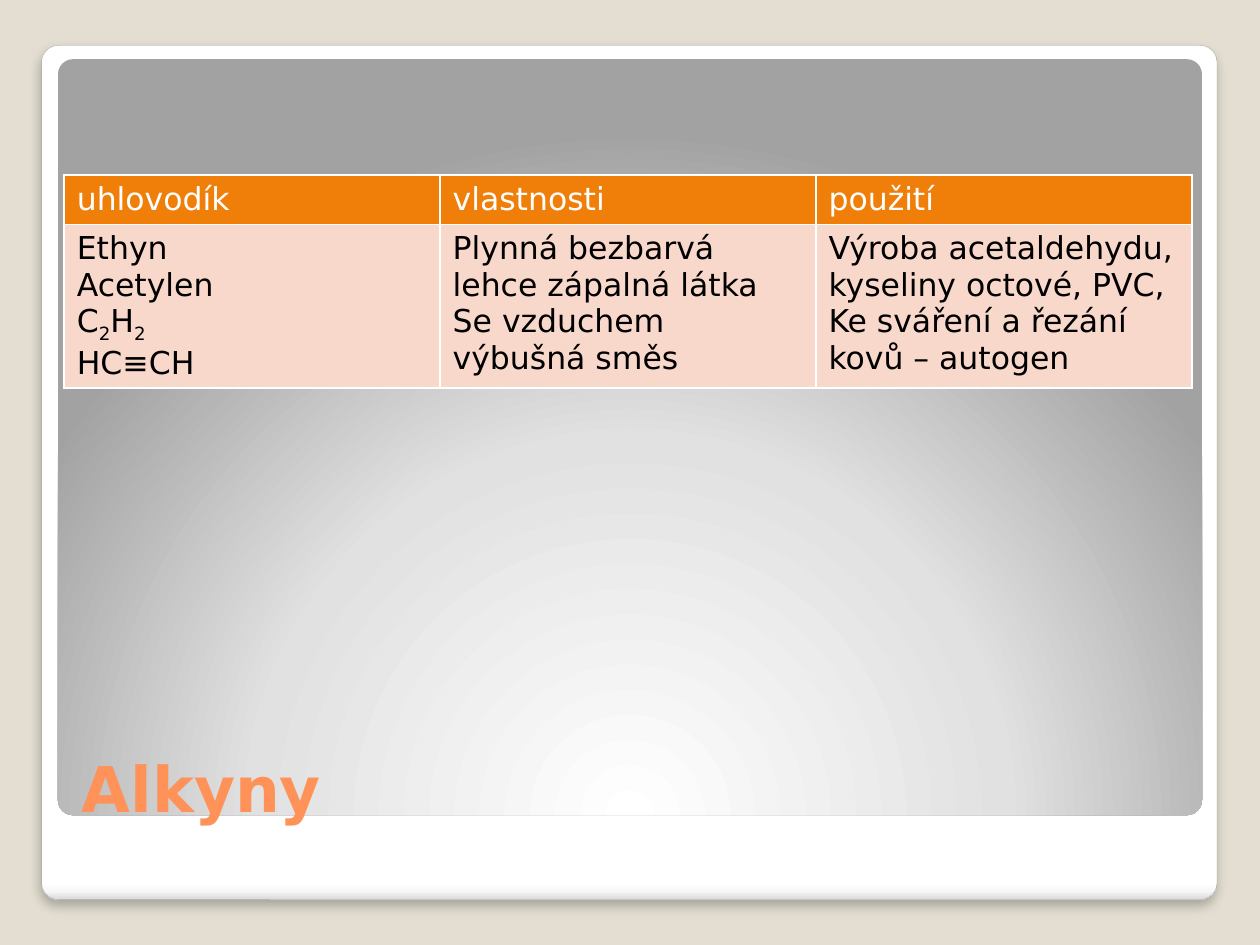
import dataclasses
import typing

import pptx
import pptx.dml.color
import pptx.enum.shapes
import pptx.enum.text
import pptx.oxml
import pptx.oxml.ns
import pptx.util

Inches = pptx.util.Inches
Pt = pptx.util.Pt
RGB = pptx.dml.color.RGBColor

BEIGE = RGB(0xE3, 0xDE, 0xD1)
WHITE = RGB(0xFF, 0xFF, 0xFF)
BLACK = RGB(0x00, 0x00, 0x00)
GREY = RGB(0xA4, 0xA4, 0xA4)
ORANGE = RGB(0xF0, 0x7F, 0x09)
PEACH = RGB(0xF9, 0xD8, 0xCC)
TITLE_ORANGE = RGB(0xFF, 0x92, 0x58)

FONT = "DejaVu Sans"
TITLE_FORMAT = {"name": FONT, "size": Pt(36), "bold": True}
CELL_FORMAT = {"name": FONT, "size": Pt(18), "bold": False}

NS = pptx.oxml.ns.nsdecls("a")


@dataclasses.dataclass(frozen=True)
class Panel:
    box: tuple[float, float, float, float]
    stops: tuple[tuple[int, str], ...]
    shade: str
    framed: bool


@dataclasses.dataclass(frozen=True)
class Run:
    text: str
    subscript: bool = False


Lines = list[list[Run]]

PANELS = [
    Panel((0.33, 0.36, 9.33, 6.78),
          ((0, "FFFFFF"), (98, "FFFFFF"), (99, "F7F7F7"), (100, "DADADA")),
          '<a:lin ang="5400000" scaled="0"/>', True),
    Panel((0.46, 0.47, 9.08, 6),
          ((0, "FFFFFF"), (55, "E1E1E1"), (100, "A2A2A2")),
          '<a:path path="circle"><a:fillToRect l="50000" t="175000" '
          'r="50000" b="-75000"/></a:path>', False),
]


def plain(*lines: str) -> Lines:
    return [[Run(line)] for line in lines]


ETHYNE = plain("Ethyn", "Acetylen")
ETHYNE += [[Run("C"), Run("2", True), Run("H"), Run("2", True)]]
ETHYNE += plain("HC≡CH")

ROWS: list[list[Lines]] = [
    [plain("uhlovodík"), plain("vlastnosti"), plain("použití")],
    [ETHYNE,
     plain("Plynná bezbarvá lehce zápalná látka", "Se vzduchem výbušná směs"),
     plain("Výroba acetaldehydu, kyseliny octové, PVC,",
           "Ke sváření a řezání kovů – autogen")],
]
ROW_STYLES = [(ORANGE, WHITE), (PEACH, BLACK)]
ROW_HEIGHTS = [0.39, 1.3]


def format_font(font: typing.Any, values: dict[str, typing.Any], color: RGB) -> None:
    for name, value in values.items():
        setattr(font, name, value)
    font.color.rgb = color


def add_panel(slide: typing.Any, panel: Panel) -> None:
    sp = slide.shapes.add_shape(
        pptx.enum.shapes.MSO_SHAPE.ROUNDED_RECTANGLE, *map(Inches, panel.box))
    sp.adjustments[0] = 0.02
    sp.shadow.inherit = False
    stops = "".join(f'<a:gs pos="{pos * 1000}"><a:srgbClr val="{color}"/></a:gs>'
                    for pos, color in panel.stops)
    sp._element.spPr.insert(2, pptx.oxml.parse_xml(
        f'<a:gradFill {NS} rotWithShape="1"><a:gsLst>{stops}</a:gsLst>'
        f'{panel.shade}</a:gradFill>'))
    if not panel.framed:
        sp.line.fill.background()
        return
    sp.line.color.rgb = GREY
    sp.line.width = Pt(0.16)
    effects = sp._element.spPr.find(pptx.oxml.ns.qn("a:effectLst"))
    effects.append(pptx.oxml.parse_xml(
        f'<a:outerShdw {NS} blurRad="{Pt(6)}" dist="{Pt(4)}" dir="5400000" '
        'algn="tl" rotWithShape="0"><a:srgbClr val="000000">'
        '<a:alpha val="25000"/></a:srgbClr></a:outerShdw>'))


def fill_cell(cell: typing.Any, lines: Lines, fill: RGB, color: RGB) -> None:
    # Borders come before the fill in the cell properties
    tc_pr = cell._tc.get_or_add_tcPr()
    for side in "LRTB":
        tc_pr.append(pptx.oxml.parse_xml(
            f'<a:ln{side} {NS} w="{Pt(1)}"><a:solidFill>'
            f'<a:srgbClr val="{WHITE}"/></a:solidFill></a:ln{side}>'))
    cell.fill.solid()
    cell.fill.fore_color.rgb = fill
    tf = cell.text_frame
    for i, line in enumerate(lines):
        p = tf.add_paragraph() if i else tf.paragraphs[0]
        for run in line:
            r = p.add_run()
            r.text = run.text
            format_font(r.font, CELL_FORMAT, color)
            if run.subscript:
                r.font._element.set("baseline", "-25000")


def add_properties_table(slide: typing.Any) -> None:
    table = slide.shapes.add_table(
        len(ROWS), len(ROWS[0]), Inches(0.51), Inches(1.39),
        Inches(8.95), Inches(sum(ROW_HEIGHTS))).table
    for i, (row, height, style) in enumerate(zip(ROWS, ROW_HEIGHTS, ROW_STYLES)):
        table.rows[i].height = Inches(height)
        for j, lines in enumerate(row):
            fill_cell(table.cell(i, j), lines, *style)


def place_title(slide: typing.Any, text: str) -> None:
    sp = slide.shapes.title
    box = {"left": 0.55, "top": 5.45, "width": 8.95, "height": 1.15}
    for name, value in box.items():
        setattr(sp, name, Inches(value))
    tf = sp.text_frame
    tf.vertical_anchor = pptx.enum.text.MSO_ANCHOR.BOTTOM
    p = tf.paragraphs[0]
    p.alignment = pptx.enum.text.PP_ALIGN.LEFT
    r = p.add_run()
    r.text = text
    format_font(r.font, TITLE_FORMAT, TITLE_ORANGE)
    # Bring the title in front of the panels
    slide.shapes._spTree.append(sp._element)


def main() -> None:
    prs = pptx.Presentation()
    prs.slide_width, prs.slide_height = Inches(10), Inches(7.5)
    slide = prs.slides.add_slide(prs.slide_layouts[5])
    slide.background.fill.solid()
    slide.background.fill.fore_color.rgb = BEIGE

    for panel in PANELS:
        add_panel(slide, panel)
    place_title(slide, "Alkyny")
    add_properties_table(slide)
    prs.save("out.pptx")


if __name__ == "__main__":
    main()
